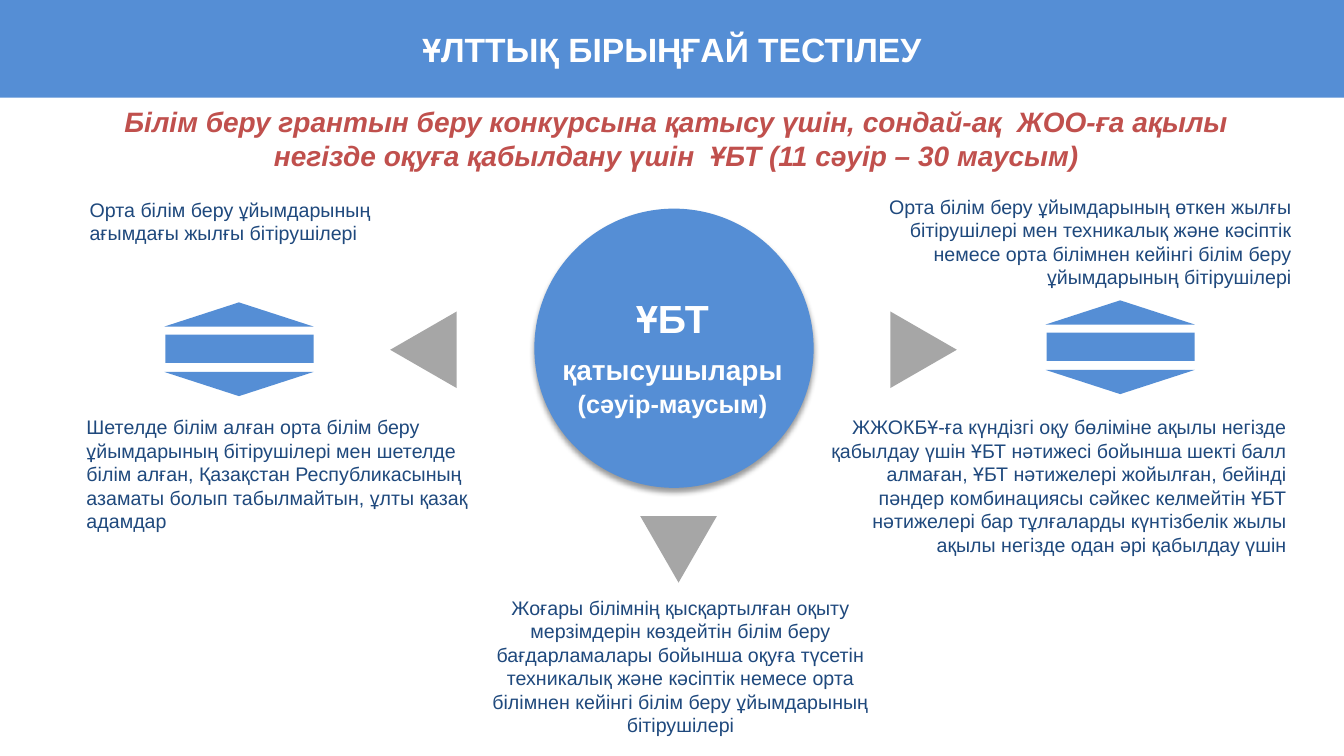
from lxml.etree import SubElement
from pptx import Presentation
from pptx.dml.color import RGBColor
from pptx.enum.shapes import MSO_SHAPE
from pptx.enum.text import MSO_ANCHOR, MSO_AUTO_SIZE, PP_ALIGN
from pptx.oxml.ns import qn
from pptx.util import Inches, Pt

COLORS = {"blue": "558ED5", "gray": "A6A6A6", "navy": "1F497D",
          "red": "C0504D", "white": "FFFFFF", "black": "000000"}
LEFT, CENTER, RIGHT = PP_ALIGN.LEFT, PP_ALIGN.CENTER, PP_ALIGN.RIGHT


def rgb(name):
    return RGBColor.from_string(COLORS[name])


def add_block(s, kind, x, y, w, h, color="blue", rotation=0):
    sp = s.shapes.add_shape(kind, Inches(x), Inches(y), Inches(w), Inches(h))
    sp.shadow.inherit = False
    sp.fill.solid()
    sp.fill.fore_color.rgb = rgb(color)
    sp.line.fill.background()
    sp.rotation = rotation
    return sp


def add_soft_shadow(sp):
    effects = sp._element.spPr.find(qn("a:effectLst"))
    shadow = SubElement(effects, qn("a:outerShdw"), blurRad=str(Pt(4)),
                        dist=str(Pt(3)), dir="5400000", rotWithShape="0")
    color = SubElement(shadow, qn("a:srgbClr"), val=COLORS["black"])
    SubElement(color, qn("a:alpha"), val="40000")


def write(tf, parts, color, align, bold=False, italic=False):
    """Fill one paragraph with (text, size) parts."""
    p = tf.paragraphs[0]
    p.alignment = align
    for text, size in parts:
        r = p.add_run()
        r.text = text
        r.font.name = "Arial"
        r.font.size = Pt(size)
        r.font.bold = bold
        r.font.italic = italic
        r.font.color.rgb = rgb(color)


def add_text(s, x, y, w, h, parts, color="navy", align=LEFT, **style):
    tf = s.shapes.add_textbox(Inches(x), Inches(y), Inches(w), Inches(h)).text_frame
    tf.word_wrap = True
    tf.auto_size = MSO_AUTO_SIZE.SHAPE_TO_FIT_TEXT
    write(tf, parts, color, align, **style)
    return tf


def add_emblem(s, x, y):
    """A bar between an upward and a downward triangle."""
    add_block(s, MSO_SHAPE.RECTANGLE, x + 0.01, y + 0.32, 1.47, 0.28)
    for dy, rotation in ((0, 0), (0.69, 180)):
        add_block(s, MSO_SHAPE.ISOSCELES_TRIANGLE, x, y + dy, 1.48, 0.24,
                  rotation=rotation)


def main():
    prs = Presentation()
    prs.slide_width, prs.slide_height = Inches(13.33), Inches(7.5)
    s = prs.slides.add_slide(prs.slide_layouts[6])

    # Title band and subtitle
    band = add_block(s, MSO_SHAPE.RECTANGLE, 0, 0, 13.33, 0.97)
    band.text_frame.vertical_anchor = MSO_ANCHOR.MIDDLE
    write(band.text_frame, [("ҰЛТТЫҚ БІРЫҢҒАЙ ТЕСТІЛЕУ", 24)], "white", CENTER, bold=True)
    add_text(s, 1, 0.99, 11.42, 0.77,
             [("Білім беру грантын беру конкурсына қатысу үшін, сондай-ақ  ЖОО-ға ақылы "
               "негізде оқуға қабылдану үшін  ҰБТ (11 сәуір – 30 маусым)", 20)],
             "red", CENTER, bold=True, italic=True)

    # Central circle
    circle = add_block(s, MSO_SHAPE.OVAL, 5.3, 2.07, 2.77, 2.77)
    add_soft_shadow(circle)
    tf = add_text(s, 5.33, 2.86, 2.68, 1.35,
                  [("ҰБТ ", 28), ("қатысушылары", 20), (" ", 28), ("(сәуір-маусым)", 18)],
                  "white", CENTER, bold=True)
    tf.vertical_anchor = MSO_ANCHOR.MIDDLE

    # Pointers left, right and down
    for x, y, rotation in ((3.82, 3.14, 270), (8.78, 3.14, 90), (6.35, 5.12, 180)):
        add_block(s, MSO_SHAPE.ISOSCELES_TRIANGLE, x, y, 0.76, 0.66, "gray", rotation)

    # Side emblems
    add_emblem(s, 1.63, 3)
    add_emblem(s, 10.37, 2.98)

    # Participant groups
    groups = [
        (0.79, 1.91, 3.91, 0.57, LEFT,
         "Орта білім беру ұйымдарының ағымдағы жылғы бітірушілері"),
        (0.76, 4.07, 4.33, 1.28, LEFT,
         "Шетелде білім алған орта білім беру ұйымдарының бітірушілері мен шетелде "
         "білім алған, Қазақстан Республикасының азаматы болып табылмайтын, ұлты қазақ "
         "адамдар"),
        (8.45, 1.88, 4.46, 1.04, RIGHT,
         "Орта білім беру ұйымдарының өткен жылғы бітірушілері мен техникалық және "
         "кәсіптік немесе орта білімнен кейінгі білім беру ұйымдарының бітірушілері"),
        (8.14, 4.07, 4.72, 1.51, RIGHT,
         "ЖЖОКБҰ-ға күндізгі оқу бөліміне ақылы негізде қабылдау үшін ҰБТ нәтижесі "
         "бойынша шекті балл алмаған, ҰБТ нәтижелері жойылған, бейінді пәндер "
         "комбинациясы сәйкес келмейтін ҰБТ нәтижелері бар тұлғаларды күнтізбелік жылы "
         "ақылы негізде одан әрі қабылдау үшін"),
        (4.52, 5.86, 4.46, 1.28, CENTER,
         "Жоғары білімнің қысқартылған оқыту мерзімдерін көздейтін білім беру "
         "бағдарламалары бойынша оқуға түсетін техникалық және кәсіптік немесе орта "
         "білімнен кейінгі білім беру ұйымдарының бітірушілері"),
    ]
    for x, y, w, h, align, text in groups:
        add_text(s, x, y, w, h, [(text, 14)], align=align)

    prs.save("out.pptx")


if __name__ == "__main__":
    main()
